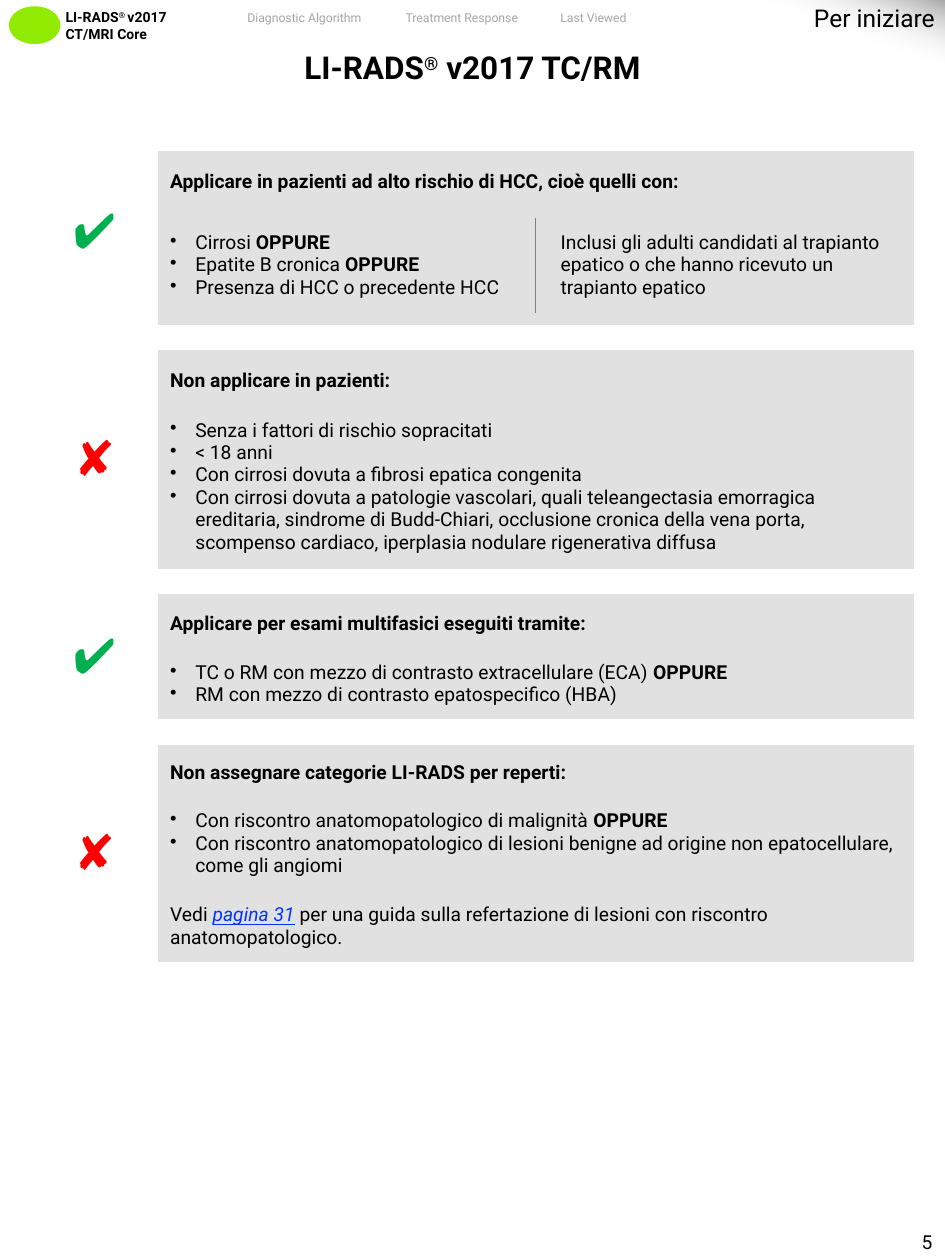
from itertools import accumulate

from lxml import etree
from pptx import Presentation
from pptx import util as u
from pptx.dml.color import RGBColor
from pptx.enum import shapes, text
from pptx.oxml.ns import qn

FONT = "Roboto"
BLACK = RGBColor(0x00, 0x00, 0x00)
WHITE = RGBColor(0xFF, 0xFF, 0xFF)
PANEL = RGBColor(0xE1, 0xE1, 0xE1)
MUTED = RGBColor(0xA6, 0xA6, 0xA6)
GREEN = RGBColor(0x00, 0xB0, 0x50)
RED = RGBColor(0xFF, 0x00, 0x00)
BLUE = RGBColor(0x04, 0x32, 0xFF)
LOGO = RGBColor(0x90, 0xEB, 0x00)
NO_STYLE = "{2D5ABB26-0587-4C30-8999-92F81FD0307C}"

APPLY, AVOID = ("✔", GREEN), ("✘", RED)
OR = ("OPPURE", "bold")
GAP = 0.2
SPACER = 0.1

SECTIONS = [
    (APPLY, "Applicare in pazienti ad alto rischio di HCC, cioè quelli con:", 0.43, [
        (SPACER, None, None),
        (0.75,
         [["Cirrosi ", OR], ["Epatite B cronica ", OR], ["Presenza di HCC o precedente HCC"]],
         "Inclusi gli adulti candidati al trapianto epatico o che hanno ricevuto un "
         "trapianto epatico"),
        (SPACER, None, None),
    ]),
    (AVOID, "Non applicare in pazienti:", 0.43, [
        (1.3,
         [["Senza i fattori di rischio sopracitati"],
          ["< 18 anni"],
          ["Con cirrosi dovuta a fibrosi epatica congenita"],
          ["Con cirrosi dovuta a patologie vascolari, quali teleangectasia emorragica "
           "ereditaria, sindrome di Budd-Chiari, occlusione cronica della vena porta, "
           "scompenso cardiaco, iperplasia nodulare rigenerativa diffusa"]],
         None),
    ]),
    (APPLY, "Applicare per esami multifasici eseguiti tramite:", 0.43, [
        (0.56,
         [["TC o RM con mezzo di contrasto extracellulare (ECA) ", OR],
          ["RM con mezzo di contrasto epatospecifico (HBA)"]],
         None),
    ]),
    (AVOID, "Non assegnare categorie LI-RADS per reperti:", 0.41, [
        (0.75,
         [["Con riscontro anatomopatologico di malignità ", OR],
          ["Con riscontro anatomopatologico di lesioni benigne ad origine non "
           "epatocellulare, come gli angiomi"]],
         None),
        (0.56,
         ["Vedi ", ("pagina 31", "link"),
          " per una guida sulla refertazione di lesioni con riscontro anatomopatologico."],
         None),
    ]),
]


def write_para(para, spans, size, color=BLACK, bold=False, align=text.PP_ALIGN.LEFT):
    para.alignment = align
    for item in spans:
        words, style = (item, "") if isinstance(item, str) else item
        span = para.add_run()
        span.text = words
        font = span.font
        font.name, font.size = FONT, u.Pt(size)
        font.color.rgb = BLUE if style == "link" else color
        font.bold = bold or style == "bold"
        if style == "link":
            font.italic = font.underline = True
        if style == "super":
            span._r.get_or_add_rPr().set("baseline", "30000")


def add_bullet(para):
    props = para._p.get_or_add_pPr()
    props.set("marL", str(u.Inches(0.2)))
    props.set("indent", str(-u.Inches(0.2)))
    etree.SubElement(props, qn("a:buChar")).set("char", "•")


def add_label(page, box, lines, size, wrap=True, anchor=text.MSO_ANCHOR.TOP, **style):
    label = page.shapes.add_textbox(*map(u.Inches, box))
    frame = label.text_frame
    frame.word_wrap = wrap
    frame.vertical_anchor = anchor
    for index, spans in enumerate(lines):
        para = frame.add_paragraph() if index else frame.paragraphs[0]
        write_para(para, spans, size, **style)
    return frame


def add_plain_shape(page, kind, box):
    shape = page.shapes.add_shape(kind, *map(u.Inches, box))
    shape.shadow.inherit = False
    shape.line.fill.background()
    return shape


def add_brand(page, box):
    left, top, width, height = box
    mark = add_plain_shape(page, shapes.MSO_SHAPE.OVAL, (left, top, 0.41, height - 0.04))
    mark.fill.solid()
    mark.fill.fore_color.rgb = LOGO
    frame = add_label(page, (left + 0.38, top - 0.02, width - 0.38, height),
                      [["LI-RADS", ("® ", "super"), "v2017"], ["CT/MRI Core"]], 8, bold=True)
    frame.margin_left = frame.margin_right = u.Inches(0.07)
    frame.margin_top = frame.margin_bottom = u.Inches(0.04)


def add_navigation(page, box):
    left, top, width, height = box
    tabs = [("Diagnostic Algorithm", 0, 1.15), ("Treatment Response", 1.25, 1.15),
            ("Last Viewed", 2.49, 0.76)]
    for name, offset, tab_width in tabs:
        add_label(page, (left + offset, top, tab_width, height), [[name]], 7, wrap=False,
                  anchor=text.MSO_ANCHOR.MIDDLE, color=MUTED, align=text.PP_ALIGN.CENTER)


def add_corner_title(page, box):
    left, top, width, height = box
    corner = add_plain_shape(page, shapes.MSO_SHAPE.RIGHT_TRIANGLE, box)
    corner.rotation = 180
    corner.fill.gradient()
    corner.fill.gradient_angle = 70
    first, last = corner.fill.gradient_stops
    first.position, first.color.rgb = 0, MUTED
    last.position, last.color.rgb = 0.5, WHITE
    clear = list(corner.element.iter(qn("a:srgbClr")))[-1]
    etree.SubElement(clear, qn("a:alpha")).set("val", "0")

    title = page.shapes.title
    title.left, title.top = u.Inches(left - 0.57), u.Inches(top - 0.03)
    title.width, title.height = u.Inches(2.1), u.Inches(0.34)
    title.text_frame.vertical_anchor = text.MSO_ANCHOR.TOP
    write_para(title.text_frame.paragraphs[0], ["Per iniziare"], 14, align=text.PP_ALIGN.RIGHT)
    page.shapes.element.append(title.element)


def set_margins(cell, left=0.1, top=0.1, right=0.1, bottom=0.1):
    cell.margin_left, cell.margin_top = u.Inches(left), u.Inches(top)
    cell.margin_right, cell.margin_bottom = u.Inches(right), u.Inches(bottom)


def clear_cell(cell):
    set_margins(cell, 0, 0, 0, 0)
    cell.fill.background()
    end = etree.SubElement(cell.text_frame.paragraphs[0]._p, qn("a:endParaRPr"))
    end.set("sz", "100")


def add_side_border(cell, side):
    line = etree.Element(qn("a:" + side), w=str(u.Pt(0.5)))
    fill = etree.SubElement(line, qn("a:solidFill"))
    etree.SubElement(fill, qn("a:srgbClr")).set("val", "808080")
    cell._tc.get_or_add_tcPr().insert(0, line)


def fill_body(cell, content):
    set_margins(cell)
    cell.vertical_anchor = text.MSO_ANCHOR.MIDDLE
    if not isinstance(content[0], list):
        write_para(cell.text_frame.paragraphs[0], content, 11)
        return
    for index, spans in enumerate(content):
        para = cell.text_frame.add_paragraph() if index else cell.text_frame.paragraphs[0]
        add_bullet(para)
        write_para(para, spans, 11)


def fill_section(table, start, section):
    (symbol, color), heading, _, body = section
    split = any(height == SPACER for height, _, _ in body)
    for row in range(start, start + len(body) + 1):
        for column in (1, 2):
            cell = table.cell(row, column)
            cell.fill.solid()
            cell.fill.fore_color.rgb = PANEL
        if row == start or not split:
            table.cell(row, 1).merge(table.cell(row, 2))

    last = start + len(body) - (1 if split else 0)
    sign = table.cell(start, 0)
    sign.merge(table.cell(last, 0))
    sign.vertical_anchor = text.MSO_ANCHOR.MIDDLE
    write_para(sign.text_frame.paragraphs[0], [symbol], 28, color, align=text.PP_ALIGN.CENTER)

    head = table.cell(start, 1)
    set_margins(head)
    head.vertical_anchor = text.MSO_ANCHOR.BOTTOM
    write_para(head.text_frame.paragraphs[0], [heading], 11, bold=True)

    for row, (_, content, aside) in enumerate(body, start + 1):
        if content:
            fill_body(table.cell(row, 1), content)
        if aside:
            note = table.cell(row, 2)
            fill_body(note, [aside])
            note.margin_left = u.Inches(0.2)
            add_side_border(table.cell(row, 1), "lnR")
            add_side_border(note, "lnL")


def add_criteria_table(page, box):
    heights = [0.8]
    for index, (_, _, head_height, body) in enumerate(SECTIONS):
        heights += [GAP] if index else []
        heights += [head_height] + [height for height, _, _ in body]
    table = page.shapes.add_table(len(heights), 3, *map(u.Inches, box)).table
    table.first_row = table.horz_banding = False
    table._tbl.tblPr.find(qn("a:tableStyleId")).text = NO_STYLE
    for column, width in zip(table.columns, (1, 3, 3)):
        column.width = u.Inches(width)
    for row, height in zip(table.rows, heights):
        row.height = u.Inches(height)
        for cell in row.cells:
            clear_cell(cell)

    banner = table.cell(0, 0)
    banner.merge(table.cell(0, 2))
    set_margins(banner, top=0, bottom=0.5)
    write_para(banner.text_frame.paragraphs[0], ["LI-RADS", ("®", "super"), " v2017 TC/RM"],
               18, bold=True, align=text.PP_ALIGN.CENTER)

    starts = accumulate((len(section[3]) + 2 for section in SECTIONS[:-1]), initial=1)
    for start, section in zip(starts, SECTIONS):
        fill_section(table, start, section)


def main():
    deck = Presentation()
    deck.slide_width, deck.slide_height = u.Inches(7.5), u.Inches(10)
    page = deck.slides.add_slide(deck.slide_layouts[5])
    add_brand(page, (0.07, 0.05, 1.67, 0.34))
    add_navigation(page, (1.84, 0.03, 3.25, 0.22))
    add_criteria_table(page, (0.25, 0.4, 7, 7.23))
    add_label(page, (7.01, 9.71, 0.49, 0.29), [["5"]], 11, wrap=False,
              anchor=text.MSO_ANCHOR.MIDDLE, align=text.PP_ALIGN.RIGHT)
    add_corner_title(page, (5.99, 0, 1.51, 0.55))
    deck.save("out.pptx")


if __name__ == "__main__":
    main()
